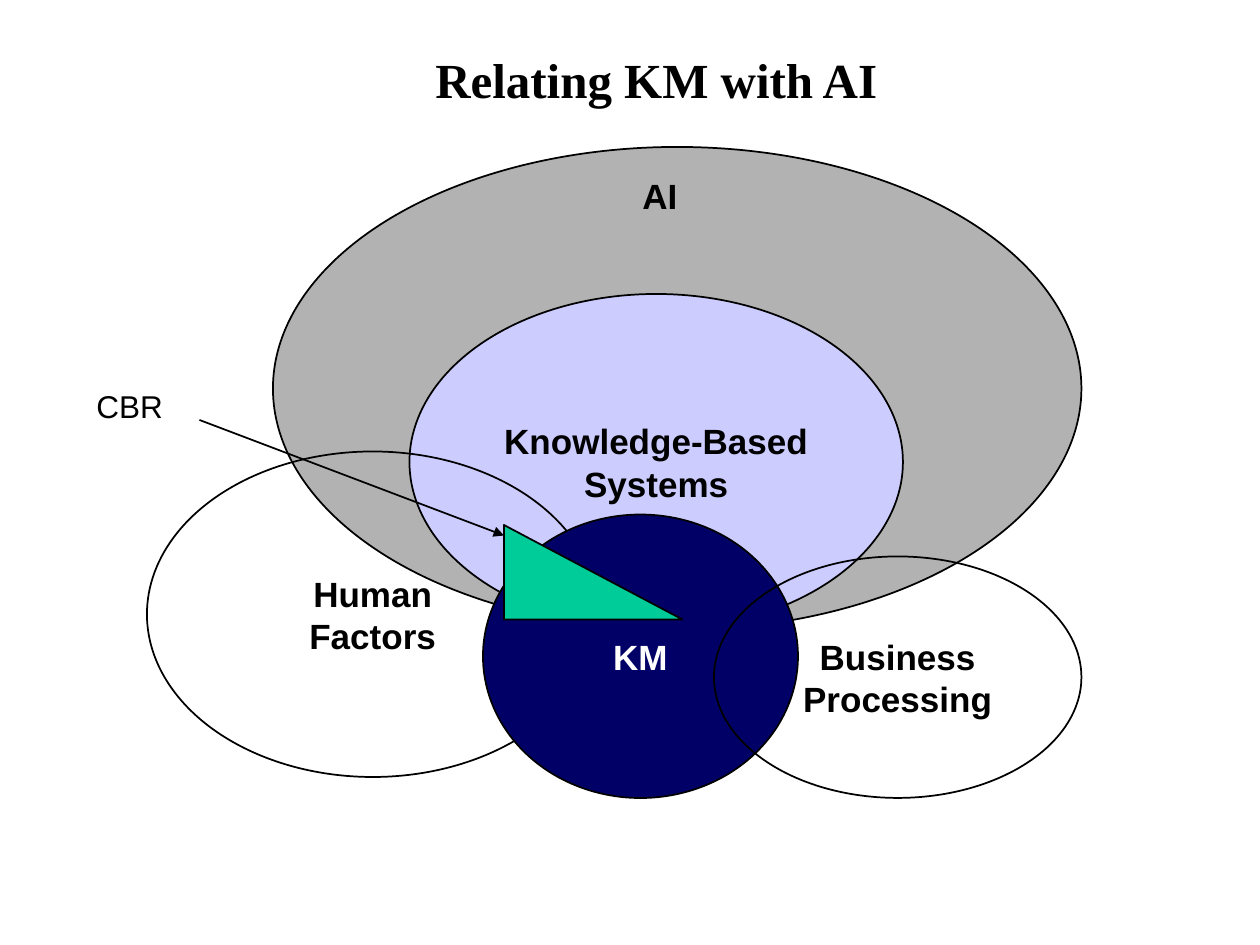
"""Build the slide that relates knowledge management with artificial intelligence."""
import pptx
import pptx.util
import pptx.dml.color
import pptx.enum.shapes
import pptx.enum.text
import pptx.oxml

Pt = pptx.util.Pt
SHAPE = pptx.enum.shapes.MSO_SHAPE
ALIGN = pptx.enum.text.PP_ALIGN
ANCHOR = pptx.enum.text.MSO_ANCHOR
DRAWING_NS = 'xmlns:a="http://schemas.openxmlformats.org/drawingml/2006/main"'

THEME = {
    "ink": "000000", "inverse": "FFFFFF", "ai": "B2B2B2", "systems": "CCCCFF",
    "km": "000066", "cbr": "00CC99", "heading": "Times New Roman", "body": "Arial",
    "title_size": 28, "field_size": 20, "note_size": 18, "line": 1,
}

TITLE = ("Relating KM with AI", (102, 18, 546, 54))
AI_LABEL = ("AI", (360, 96, 34.5, 31))
CBR_LABEL = ("CBR", (48, 217.5, 52.5, 29))
AI_FIELD = ((), (156, 84, 462, 276), "ai", "ink")
FIELDS = [
    (("Knowledge-Based", "Systems"), (234, 168, 282, 192), "systems", "ink"),
    (("Human", "Factors"), (84, 258, 258, 186), None, "ink"),
    (("KM",), (276, 294, 180, 162), "km", "inverse"),
    (("Business", "Processing"), (408, 318, 210, 138), None, "ink"),
]
CBR_WEDGE = ((), (288, 300, 102, 54), "cbr", "ink")
CBR_POINTER = (114, 240, 288, 306)


def color(name):
    return pptx.dml.color.RGBColor.from_string(THEME[name])


def points(lengths):
    return [Pt(length) for length in lengths]


def write(frame, lines, size="field_size", font="body", ink="ink", bold=True,
          align=ALIGN.CENTER, anchor=ANCHOR.MIDDLE, wrap=False):
    frame.word_wrap = wrap
    frame.vertical_anchor = anchor
    for index, line in enumerate(lines):
        paragraph = frame.paragraphs[0] if index == 0 else frame.add_paragraph()
        paragraph.alignment = align
        run = paragraph.add_run()
        run.text = line
        run.font.name = THEME[font]
        run.font.size = Pt(THEME[size])
        run.font.bold = bold
        run.font.color.rgb = color(ink)


def add_field(slide, field, outline=SHAPE.OVAL):
    lines, box, fill, ink = field
    area = slide.shapes.add_shape(outline, *points(box))
    area.shadow.inherit = False
    if fill:
        area.fill.solid()
        area.fill.fore_color.rgb = color(fill)
    else:
        area.fill.background()
    area.line.color.rgb = color("ink")
    area.line.width = Pt(THEME["line"])
    if lines:
        write(area.text_frame, lines, ink=ink)


def add_label(slide, label, fill=None, **style):
    words, box = label
    tag = slide.shapes.add_textbox(*points(box))
    if fill:
        tag.fill.solid()
        tag.fill.fore_color.rgb = color(fill)
    write(tag.text_frame, [words], align=ALIGN.LEFT, anchor=ANCHOR.TOP, **style)


def add_pointer(slide, ends):
    pointer = slide.shapes.add_connector(
        pptx.enum.shapes.MSO_CONNECTOR.STRAIGHT, *points(ends))
    pointer.line.color.rgb = color("ink")
    pointer.line.width = Pt(THEME["line"])
    pointer.line._get_or_add_ln().append(
        pptx.oxml.parse_xml(f'<a:tailEnd {DRAWING_NS} type="triangle"/>'))
    pointer._element.spPr.append(pptx.oxml.parse_xml(f"<a:effectLst {DRAWING_NS}/>"))


def main():
    deck = pptx.Presentation()
    deck.slide_width, deck.slide_height = Pt(720), Pt(540)
    slide = deck.slides.add_slide(deck.slide_layouts[5])

    words, box = TITLE
    heading = slide.shapes.title
    heading.left, heading.top, heading.width, heading.height = points(box)
    write(heading.text_frame, [words], size="title_size", font="heading", wrap=True)

    add_field(slide, AI_FIELD)
    add_label(slide, AI_LABEL, fill="ai")
    for field in FIELDS:
        add_field(slide, field)
    add_label(slide, CBR_LABEL, size="note_size", bold=False)
    add_field(slide, CBR_WEDGE, SHAPE.RIGHT_TRIANGLE)
    add_pointer(slide, CBR_POINTER)
    deck.save("out.pptx")


if __name__ == "__main__":
    main()
